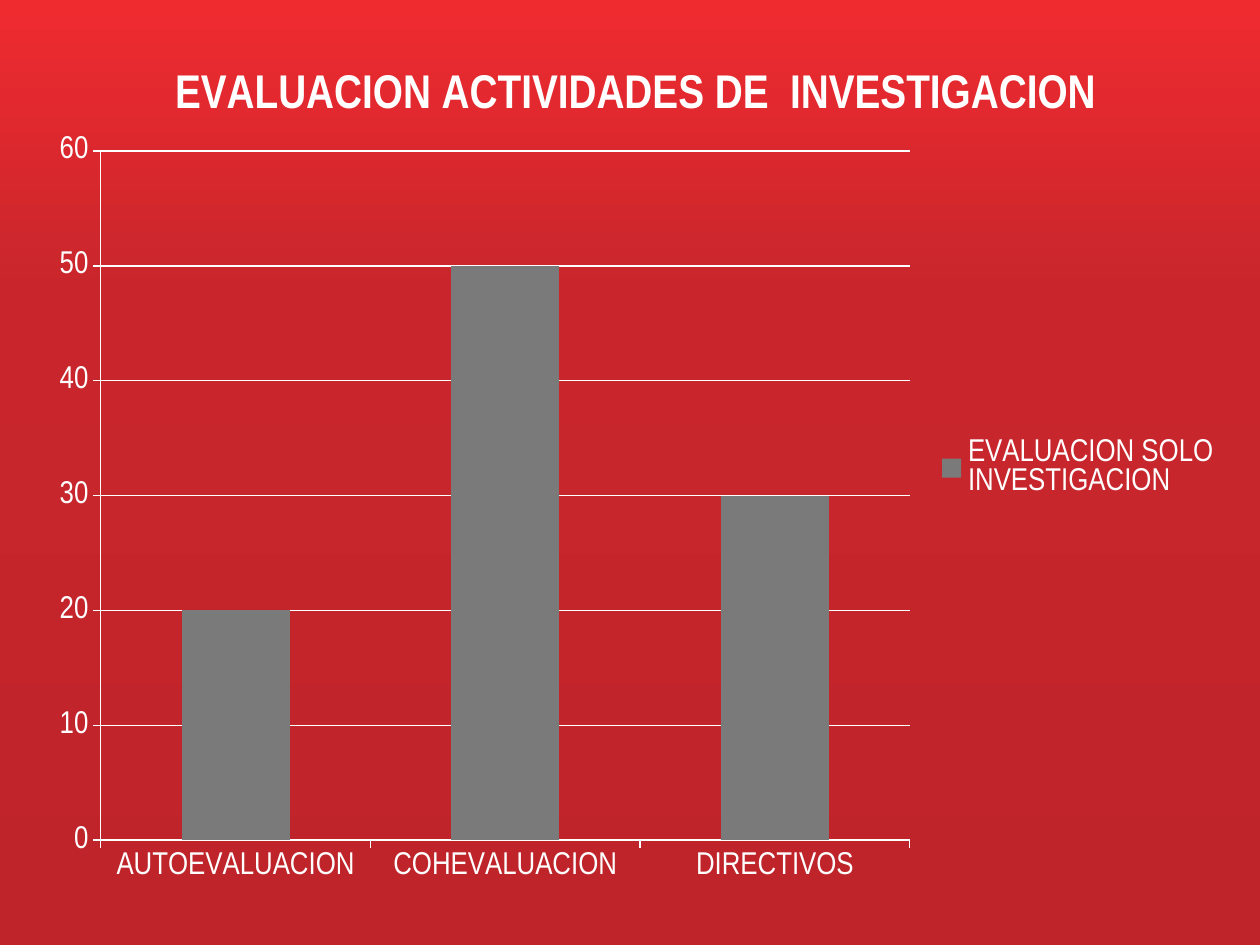
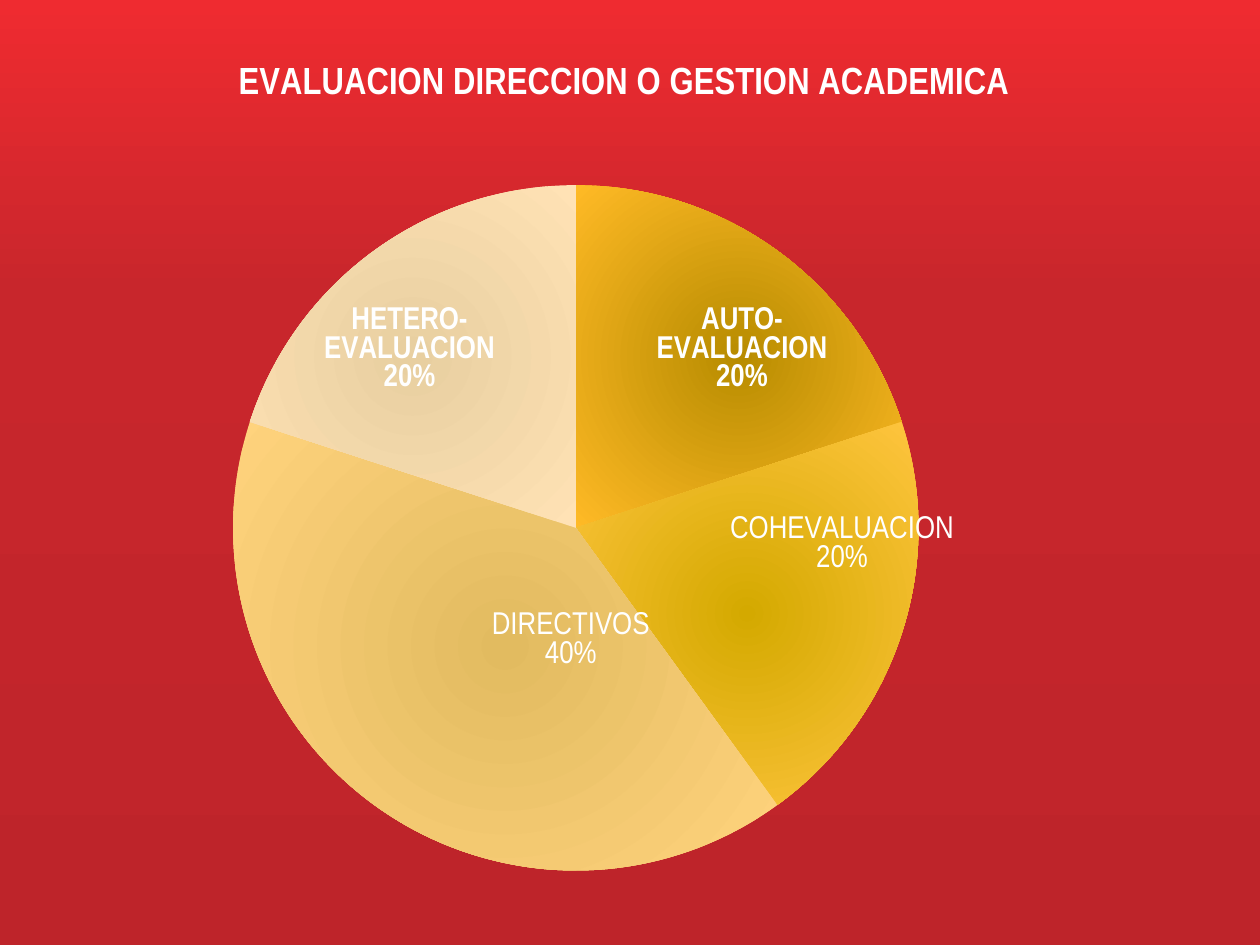
from pptx import Presentation
from pptx.chart.data import CategoryChartData
from pptx.dml.color import RGBColor
from pptx.enum.chart import XL_CHART_TYPE, XL_LABEL_POSITION, XL_LEGEND_POSITION, XL_TICK_MARK
from pptx.oxml import parse_xml
from pptx.oxml.ns import nsdecls, qn
from pptx.util import Inches, Pt

COLUMN, PIE = XL_CHART_TYPE.COLUMN_CLUSTERED, XL_CHART_TYPE.PIE
CENTER = XL_LABEL_POSITION.CENTER
RIGHT = XL_LEGEND_POSITION.RIGHT
OUTSIDE = XL_TICK_MARK.OUTSIDE

FONT = "Arial Narrow"
WHITE = RGBColor.from_string("FFFFFF")
GRAY = RGBColor.from_string("7A7A7A")
BACKGROUND = [(0, "EF2B30"), (31, "C8262C"), (100, "BE242A")]
DOWNWARD = '<a:lin ang="5400000" scaled="0"/>'
RADIAL = '<a:path path="circle"><a:fillToRect l="50000" t="50000" r="50000" b="50000"/></a:path>'


def set_gradient(fill, stops, shade):
    """Give fill a gradient of (percent, colour) stops, with shade as its direction."""
    fill.solid()
    solid = fill._xPr.find(qn("a:solidFill"))
    gs = "".join(f'<a:gs pos="{pos * 1000}"><a:srgbClr val="{color}"/></a:gs>'
                 for pos, color in stops)
    solid.getparent().replace(solid, parse_xml(
        f'<a:gradFill {nsdecls("a")} rotWithShape="1"><a:gsLst>{gs}</a:gsLst>{shade}</a:gradFill>'))


def place(part, size, box, absolute=True):
    """Lay out a chart part at box (inches within a chart of the given size)."""
    for old in part.findall(qn("c:layout")):
        part.remove(old)
    is_plot = part.tag == qn("c:plotArea")
    xml = '<c:layoutTarget val="inner"/>' if is_plot else ""
    if absolute:
        xml += '<c:xMode val="edge"/><c:yMode val="edge"/>'
    for name, value, whole in zip("xywh", box, size * 2):
        xml += f'<c:{name} val="{value / whole:.4f}"/>'
    part.insert(0 if is_plot else 1, parse_xml(
        f'<c:layout {nsdecls("c")}><c:manualLayout>{xml}</c:manualLayout></c:layout>'))


prs = Presentation()
prs.slide_width, prs.slide_height = Inches(10), Inches(7.5)
set_gradient(prs.slide_master.background.fill, BACKGROUND, DOWNWARD)
blank = prs.slide_layouts[6]

# kind, title, title size, series name, categories, values, frame, title corner (None: centred), plot box
slides = [
    (COLUMN, "EVALUACION ACTIVIDADES DE  INVESTIGACION", 27, "EVALUACION SOLO INVESTIGACION",
     ["AUTOEVALUACION", "COHEVALUACION", "DIRECTIVOS"], [20, 50, 30],
     (0.28, 0.29, 9.53, 6.85), None, (0.52, 0.91, 6.42, 5.47)),
    (PIE, "EVALUACION DIRECCION O GESTION ACADEMICA", 21.6,
     "EVALUACION DIRECCION O GESTION ACADEMICA",
     ["AUTOEVALUACION", "COHEVALUACION", "DIRECTIVOS", "HETEROEVALUACION"], [20, 20, 40, 20],
     (0.2, 0.21, 9.69, 7.09), (1.64, 0.23), (1.65, 1.26, 5.44, 5.44)),
]
charts = []
for kind, title, title_size, name, cats, values, frame, corner, plot_box in slides:
    s = prs.slides.add_slide(blank)
    data = CategoryChartData()
    data.categories = cats
    data.add_series(name, values)
    chart = s.shapes.add_chart(kind, *map(Inches, frame), data).chart
    chart.font.name, chart.font.size = FONT, Pt(18)
    chart.font.color.rgb = WHITE
    chart.has_title = True
    tf = chart.chart_title.text_frame
    tf.text = title
    font = tf.paragraphs[0].font
    font.name, font.size, font.bold = FONT, Pt(title_size), True
    font.color.rgb = WHITE
    size = frame[2:]
    if corner:
        place(chart.chart_title._element, size, corner)
    place(chart._chartSpace.chart.plotArea, size, plot_box)
    charts.append((chart, size))

# Column chart
chart, size = charts[0]
plot = chart.plots[0]
plot.gap_width = 150
plot.vary_by_categories = False
fill = plot.series[0].format.fill
fill.solid()
fill.fore_color.rgb = GRAY
values_axis = chart.value_axis
values_axis.minimum_scale, values_axis.maximum_scale, values_axis.major_unit = 0, 60, 10
values_axis.has_major_gridlines = True
for axis in (chart.category_axis, values_axis):
    axis.major_tick_mark = OUTSIDE
    axis.format.line.color.rgb = WHITE
grid_line = values_axis.major_gridlines.format.line
grid_line.color.rgb = WHITE
grid_line.width = Pt(0.75)
chart.has_legend = True
chart.legend.position = RIGHT
chart.legend.include_in_layout = False
place(chart.legend._element, size, (7.15, 3.15, 2.25, 0.55))

# Pie chart: centre colour, edge colour, label shift, own label text
chart, size = charts[1]
chart.has_legend = False
plot = chart.plots[0]
plot.vary_by_categories = True
slices = [
    ("B88C00", "FFBA26", (0.52, -0.31), "AUTO-\nEVALUACION\n20%"),
    ("D4A900", "FFC53F", (0.82, -0.28), None),
    ("E2BB60", "FFD37D", (0.76, -0.2), None),
    ("E8CFA0", "FFE2B5", (-0.52, -0.31), "HETERO-\nEVALUACION\n20%"),
]
for i, (center, edge, shift, text) in enumerate(slices):
    point = plot.series[0].points[i]
    set_gradient(point.format.fill, [(0, center), (100, edge)], RADIAL)
    point.format.line.fill.background()
    label = point.data_label
    if text:
        label.text_frame.text = text
        fonts = [r.font for p in label.text_frame.paragraphs for r in p.runs]
    else:
        fonts = [label.font]
    for font in fonts:
        font.name, font.size, font.bold = FONT, Pt(18), bool(text)
        font.color.rgb = WHITE
    label.position = CENTER
    dLbl = label._dLbl
    for tag, shown in (("c:showVal", 0), ("c:showCatName", 1), ("c:showPercent", 1)):
        dLbl.find(qn(tag)).set("val", str(shown))
    dLbl.append(parse_xml(f'<c:separator {nsdecls("c")}>\n</c:separator>'))
    place(dLbl, size, shift, absolute=False)
for leader in chart._chartSpace.iter(qn("c:showLeaderLines")):
    leader.set("val", "0")

prs.save("out.pptx")
